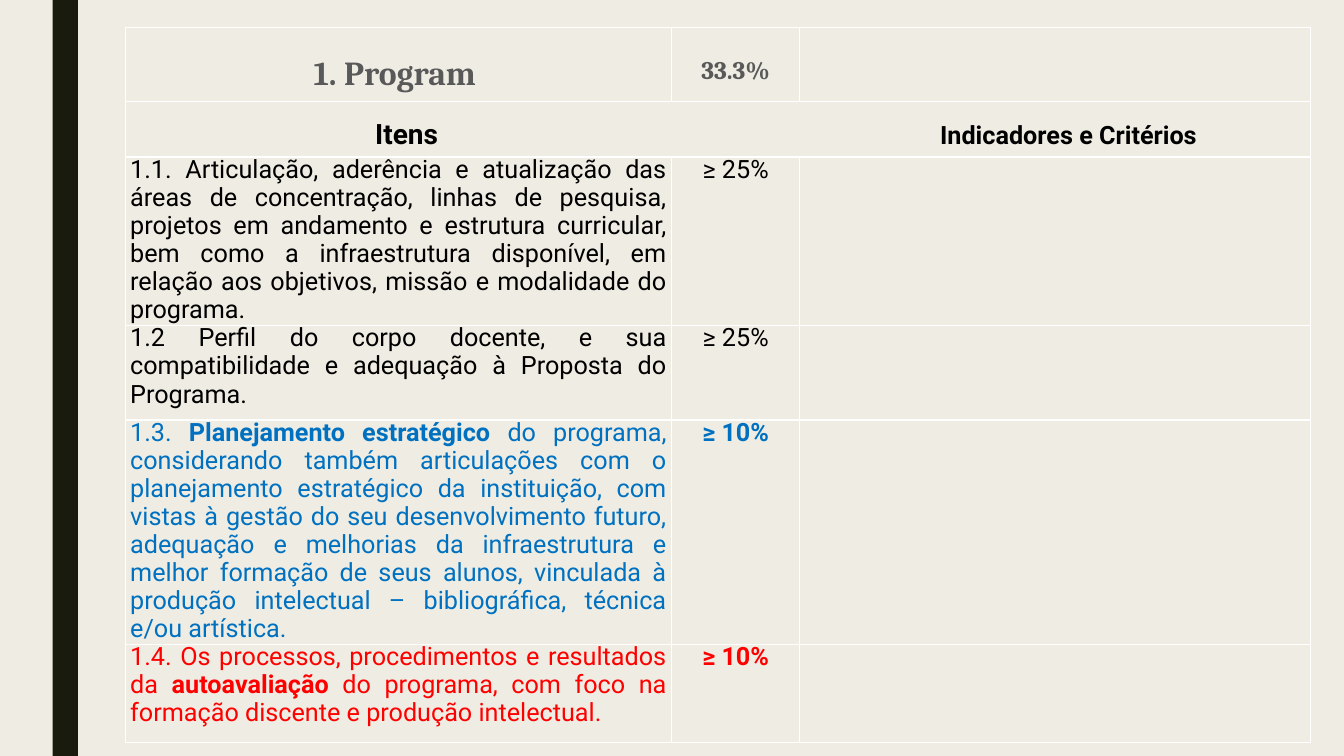
from lxml import etree
from pptx import Presentation
from pptx.dml.color import RGBColor
from pptx.enum import shapes, text
from pptx.oxml import ns
from pptx.util import Pt

BACKGROUND = RGBColor(0xEF, 0xED, 0xE3)
STRIPE = RGBColor(0x19, 0x1B, 0x0E)
GREY = RGBColor(0x59, 0x59, 0x59)
BLACK = RGBColor(0x00, 0x00, 0x00)
BLUE = RGBColor(0x00, 0x70, 0xC0)
RED = RGBColor(0xFF, 0x00, 0x00)
BORDER = RGBColor(0xFF, 0xFF, 0xFF)

# Content
TITLE = [("1. Program ", 24, 3.6), ("33.3%", 18, 1.4)]  # text, size, side margin
HEADINGS = [("Itens", 20, 175), ("Indicadores e Critérios", 18, 578.5)]  # text, size, tab

# Runs (text, bold), weight, weight is bold, colour, space before the item
ITEMS = [
    ([("1.1. Articulação, aderência e atualização das áreas de concentração, linhas de "
       "pesquisa, projetos em andamento e estrutura curricular, bem como a infraestrutura "
       "disponível, em relação aos objetivos, missão e modalidade do programa.", False)],
     "≥ 25%", False, BLACK, 2),
    ([("1.2 Perfil do corpo docente, e sua compatibilidade e adequação à Proposta do "
       "Programa.", False)],
     "≥ 25%", False, BLACK, 24),
    ([("1.3. ", False), ("Planejamento estratégico", True),
      (" do programa, considerando também articulações com o planejamento estratégico da "
       "instituição, com vistas à gestão do seu desenvolvimento futuro, adequação e "
       "melhorias da infraestrutura e melhor formação de seus alunos, vinculada à produção "
       "intelectual – bibliográfica, técnica e/ou artística.", False)],
     "≥ 10%", True, BLUE, 2),
    ([("1.4. Os processos, procedimentos e resultados da ", False), ("autoavaliação", True),
      (" do programa, com foco na formação discente e produção intelectual.", False)],
     "≥ 10%", True, RED, 18),
]
COLUMNS = [390.4, 91.4, 365]
ROWS = [53, 39.6, 103.7, 67.7, 145.4, 70]
TABLE_LEFT, TABLE_TOP = 89.4, 19.6


def add_borders(cell):
    properties = cell._tc.get_or_add_tcPr()
    for position, side in enumerate(("lnL", "lnR", "lnT", "lnB")):
        line = etree.Element(ns.qn("a:" + side), w=str(Pt(1)))
        fill = etree.SubElement(line, ns.qn("a:solidFill"))
        etree.SubElement(fill, ns.qn("a:srgbClr"), val=str(BORDER))
        properties.insert(position, line)


def add_tabs(paragraph, positions):
    tabs = etree.SubElement(paragraph._p.get_or_add_pPr(), ns.qn("a:tabLst"))
    for position in positions:
        etree.SubElement(tabs, ns.qn("a:tab"), pos=str(Pt(position)), algn="l")


def write(cell, runs, colour, font, align, spacing, before, after, margin=3.6):
    """Fill a cell with one paragraph of (text, size, bold) runs."""
    cell.margin_left = cell.margin_right = Pt(margin)
    paragraph = cell.text_frame.paragraphs[0]
    paragraph.alignment = align
    paragraph.line_spacing = spacing
    paragraph.space_before, paragraph.space_after = Pt(before), Pt(after)
    for words, size, bold in runs:
        run = paragraph.add_run()
        run.text = words
        run.font.name, run.font.size, run.font.bold = font, Pt(size), bold
        run.font.color.rgb = colour
    return paragraph


presentation = Presentation()
presentation.slide_width, presentation.slide_height = Pt(960), Pt(540)
slide = presentation.slides.add_slide(presentation.slide_layouts[6])
slide.background.fill.solid()
slide.background.fill.fore_color.rgb = BACKGROUND

# Side stripe
stripe = slide.shapes.add_shape(shapes.MSO_SHAPE.RECTANGLE, Pt(37.6), 0, Pt(18), Pt(540))
stripe.shadow.inherit = False
stripe.fill.solid()
stripe.fill.fore_color.rgb = STRIPE
stripe.line.fill.background()

# Table grid
table = slide.shapes.add_table(
    len(ROWS), len(COLUMNS), Pt(TABLE_LEFT), Pt(TABLE_TOP),
    Pt(sum(COLUMNS)), Pt(sum(ROWS))).table
table.first_row = table.horz_banding = False
for column, width in zip(table.columns, COLUMNS):
    column.width = Pt(width)
for row, height in zip(table.rows, ROWS):
    row.height = Pt(height)
for cell in table.iter_cells():
    cell.fill.background()
    cell.margin_top = cell.margin_bottom = 0
    add_borders(cell)

# Title row
for column, (words, size, margin) in enumerate(TITLE):
    cell = table.cell(0, column)
    cell.vertical_anchor = text.MSO_ANCHOR.MIDDLE
    write(cell, [(words, size, True)], GREY, "Cambria", text.PP_ALIGN.CENTER,
          1.5, 6, 6, margin)

# Heading row, one merged cell with a tab stop per heading
heading = table.cell(1, 0)
heading.merge(table.cell(1, 2))
paragraph = write(heading, [("\t" + words, size, True) for words, size, _ in HEADINGS],
                  BLACK, "Roboto", text.PP_ALIGN.LEFT, 1.5, 6, 6)
add_tabs(paragraph, [tab for _, _, tab in HEADINGS])

# Item rows
for row, (runs, weight, strong, colour, before) in enumerate(ITEMS, start=2):
    write(table.cell(row, 0), [(words, 18, bold) for words, bold in runs], colour,
          "Roboto", text.PP_ALIGN.JUSTIFY, Pt(20), before, 8)
    write(table.cell(row, 1), [(weight, 18, strong)], colour,
          "Roboto", text.PP_ALIGN.CENTER, Pt(20), 2, 8, margin=1.4)

presentation.save("out.pptx")
